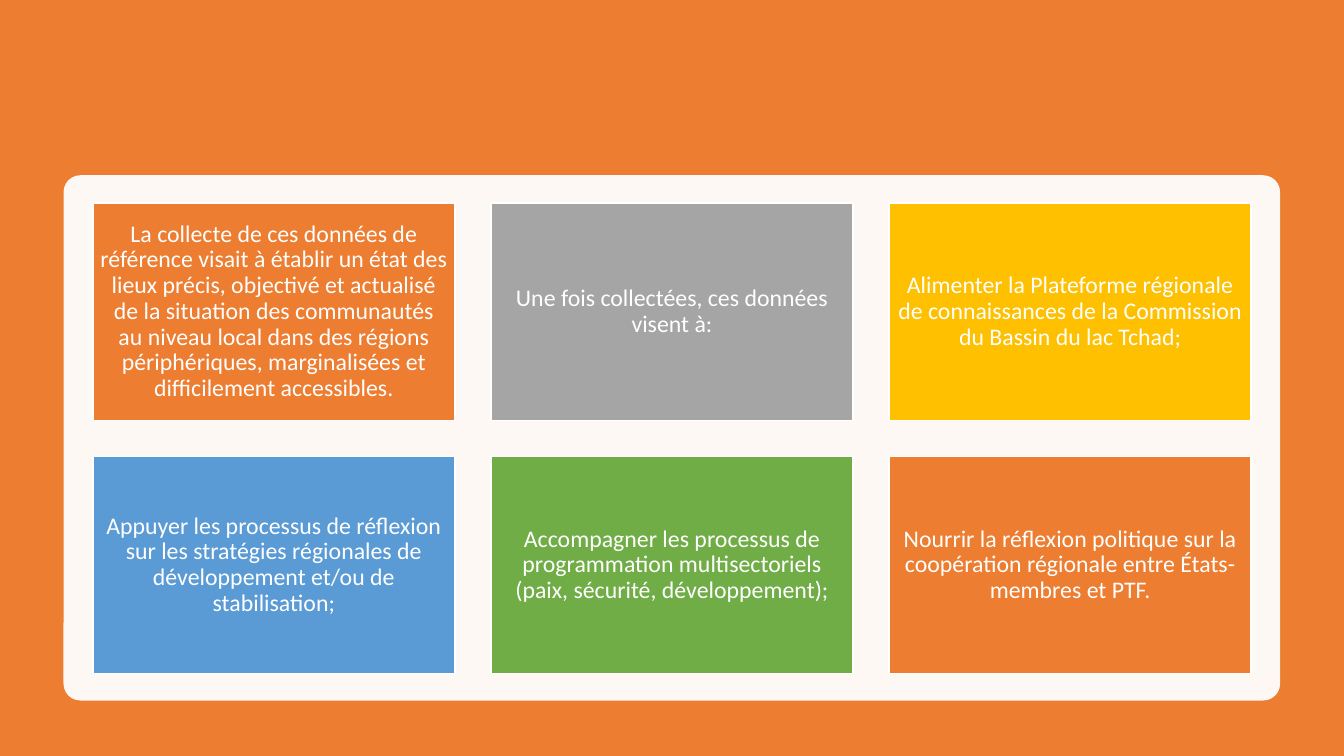
"""Build the slide on the aims of the baseline data collection."""
import pptx
import pptx.dml.color
import pptx.enum.shapes
import pptx.enum.text
import pptx.oxml
import pptx.util

Pt = pptx.util.Pt
RGBColor = pptx.dml.color.RGBColor
MSO_SHAPE = pptx.enum.shapes.MSO_SHAPE

WHITE = RGBColor(0xFF, 0xFF, 0xFF)
ORANGE = RGBColor(0xED, 0x7D, 0x31)
GREY = RGBColor(0xA5, 0xA5, 0xA5)
GOLD = RGBColor(0xFF, 0xC0, 0x00)
BLUE = RGBColor(0x5B, 0x9B, 0xD5)
GREEN = RGBColor(0x70, 0xAD, 0x47)

SLIDE_WIDTH, SLIDE_HEIGHT = 960, 540
COLUMNS = 3
CARD_LEFT, CARD_TOP = 66.3, 145
CARD_WIDTH, CARD_HEIGHT = 258.6, 155.2
COLUMN_STEP, ROW_STEP = 284.4, 181

CARDS = [
    ("La collecte de ces données de référence visait à établir un état des lieux "
     "précis, objectivé et actualisé de la situation des communautés au niveau local "
     "dans des régions périphériques, marginalisées et difficilement accessibles.", ORANGE),
    ("Une fois collectées, ces données visent à:", GREY),
    ("Alimenter la Plateforme régionale de connaissances de la Commission "
     "du Bassin du lac Tchad;", GOLD),
    ("Appuyer les processus de réflexion sur les stratégies régionales de "
     "développement et/ou de stabilisation;", BLUE),
    ("Accompagner les processus de programmation multisectoriels "
     "(paix, sécurité, développement);", GREEN),
    ("Nourrir la réflexion politique sur la coopération régionale entre "
     "États-membres et PTF.", ORANGE),
]


def add_block(slide, preset, left, top, width, height, color):
    block = slide.shapes.add_shape(preset, Pt(left), Pt(top), Pt(width), Pt(height))
    block.shadow.inherit = False
    block.fill.solid()
    block.fill.fore_color.rgb = color
    block.line.fill.background()
    return block


def add_panel(slide):
    panel = add_block(slide, MSO_SHAPE.ROUNDED_RECTANGLE, 45.4, 125.2, 869, 375.2, WHITE)
    panel.adjustments[0] = 0.032
    panel_color = panel.fill._xPr.solidFill[0]
    alpha = pptx.oxml.parse_xml(
        '<a:alpha xmlns:a="http://schemas.openxmlformats.org/drawingml/2006/main" val="95000"/>')
    panel_color.append(alpha)


def add_card(slide, left, top, statement, color):
    card = add_block(slide, MSO_SHAPE.RECTANGLE, left, top, CARD_WIDTH, CARD_HEIGHT, color)
    card.line.color.rgb = WHITE
    card.line.width = Pt(1)
    frame = card.text_frame
    frame.text = statement
    frame.word_wrap = True
    frame.vertical_anchor = pptx.enum.text.MSO_ANCHOR.MIDDLE
    frame.margin_left = frame.margin_right = Pt(5)
    frame.margin_top = frame.margin_bottom = Pt(5)
    paragraph = frame.paragraphs[0]
    paragraph.alignment = pptx.enum.text.PP_ALIGN.CENTER
    paragraph.line_spacing = 0.9
    font = paragraph.runs[0].font
    font.name = "Calibri"
    font.size = Pt(17)
    font.color.rgb = WHITE


def main():
    deck = pptx.Presentation()
    deck.slide_width, deck.slide_height = Pt(SLIDE_WIDTH), Pt(SLIDE_HEIGHT)
    slide = deck.slides.add_slide(deck.slide_layouts[6])
    add_block(slide, MSO_SHAPE.RECTANGLE, 0, 0, SLIDE_WIDTH, SLIDE_HEIGHT, ORANGE)
    add_panel(slide)
    for index, (statement, color) in enumerate(CARDS):
        row, column = divmod(index, COLUMNS)
        add_card(slide, CARD_LEFT + column * COLUMN_STEP, CARD_TOP + row * ROW_STEP,
                 statement, color)
    deck.save("out.pptx")


if __name__ == "__main__":
    main()
